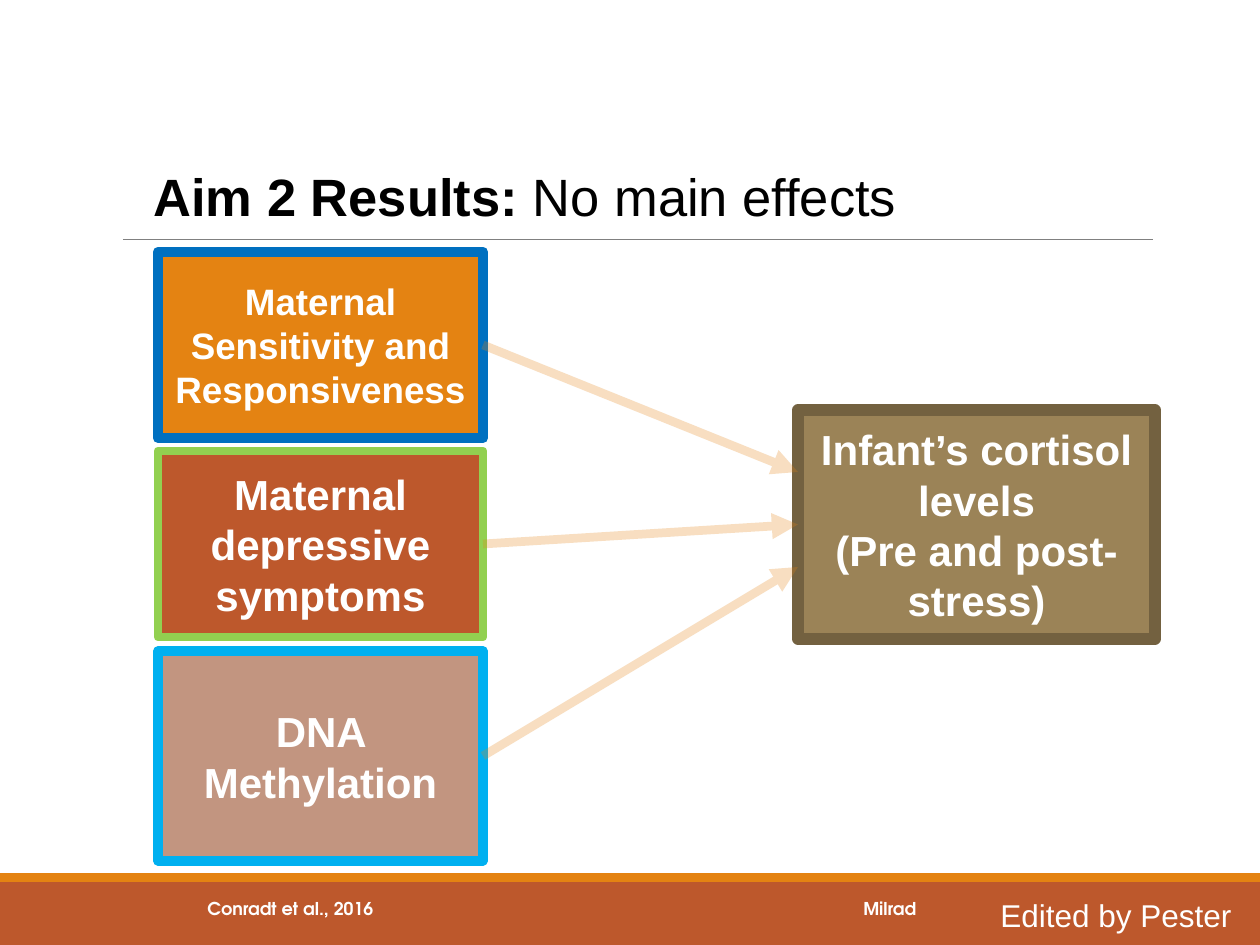
from lxml import etree
from pptx import Presentation, util as u
from pptx.dml.color import RGBColor
from pptx.enum import shapes, text
from pptx.oxml.ns import qn

PX_PER_INCH = 126
WHITE = "FFFFFF"
BLACK = "000000"
ORANGE = "E48312"
RUST = "BD582C"


def px(length):
    return u.Inches(length / PX_PER_INCH)


def color(value):
    return RGBColor.from_string(value)


class SlideBuilder:
    font = "Arial"
    footer_font = "TeX Gyre Adventor"

    def __init__(self, slide):
        self.slide = slide

    def add_span(self, para, words, **style):
        span = para.add_run()
        span.text = words
        hue = style.pop("color", WHITE)
        formats = {"name": self.font, "bold": False, **style}
        for name, value in formats.items():
            setattr(span.font, name, value)
        span.font.color.rgb = color(hue)

    def bar(self, left, top, width, height, fill):
        box = self.slide.shapes.add_shape(
            shapes.MSO_SHAPE.RECTANGLE, *map(px, (left, top, width, height)))
        box.shadow.inherit = False
        box.fill.solid()
        box.fill.fore_color.rgb = color(fill)
        box.line.fill.background()
        return box

    def factor(self, place, fill, border, weight, lines, size=24):
        box = self.bar(*place, fill)
        box.line.color.rgb = color(border)
        box.line.width = u.Pt(weight)
        frame = box.text_frame
        frame.word_wrap = True
        frame.vertical_anchor = text.MSO_ANCHOR.MIDDLE
        for index, words in enumerate(lines):
            para = frame.add_paragraph() if index else frame.paragraphs[0]
            para.alignment = text.PP_ALIGN.CENTER
            self.add_span(para, words, size=u.Pt(size), bold=True)
        return box

    def line(self, start, end, hue, weight):
        connector = self.slide.shapes.add_connector(
            shapes.MSO_CONNECTOR.STRAIGHT, *map(px, start + end))
        etree.SubElement(connector._element.spPr, qn("a:effectLst"))
        connector.line.color.rgb = color(hue)
        connector.line.width = u.Pt(weight)
        return connector

    def arrow(self, source, end, target=None):
        connector = self.line((0, 0), end, ORANGE, 5)
        connector.begin_connect(source, 3)
        if target is not None:
            connector.end_connect(target, 1)
        outline = connector.line._get_or_add_ln()
        hue = outline.find(".//" + qn("a:srgbClr"))
        etree.SubElement(hue, qn("a:alpha"), val="25000")
        etree.SubElement(outline, qn("a:tailEnd"), type="triangle")

    def label(self, place, spans, wrap=True):
        box = self.slide.shapes.add_textbox(*map(px, place))
        frame = box.text_frame
        frame.word_wrap = wrap
        frame.auto_size = text.MSO_AUTO_SIZE.SHAPE_TO_FIT_TEXT
        for words, style in spans:
            self.add_span(frame.paragraphs[0], words, **style)


def main():
    deck = Presentation()
    deck.slide_width, deck.slide_height = px(1260), px(945)
    page = SlideBuilder(deck.slides.add_slide(deck.slide_layouts[6]))

    page.bar(0, 882, 1260, 63, RUST)
    page.bar(0, 873, 1260, 9, ORANGE)
    page.line((123, 239), (1153, 239), "808080", 0.5)

    left, width = 158, 325
    sensitivity = page.factor((left, 252, width, 186), ORANGE, "0070C0", 6,
                              ["Maternal Sensitivity and Responsiveness"], size=21)
    depression = page.factor((left, 451, width, 186), RUST, "92D050", 5,
                             ["Maternal depressive symptoms"])
    cortisol = page.factor((798, 410, 357, 229), "9B8357", "736140", 6.5,
                           ["Infant’s cortisol levels", "(Pre and post-stress)"])
    page.arrow(sensitivity, (798, 472))
    page.arrow(depression, (798, 524), cortisol)

    title = {"size": u.Pt(30), "color": BLACK}
    page.label((141, 158, 775, 77),
               [("Aim 2 Results: ", {**title, "bold": True}),
                ("No main effects", title)], wrap=False)

    methylation = page.factor((left, 651, width, 210), "C29580", "00B0F0", 5.25,
                              ["DNA Methylation"])
    page.arrow(methylation, (798, 567))

    credit = {"size": u.Pt(10.1), "name": page.footer_font, "bold": True}
    page.label((195, 892, 465, 34), [("Conradt et al., 2016", credit)])
    page.label((851, 892, 127, 34), [("Milrad", credit)])
    page.label((988, 890, 272, 50), [("Edited by Pester", {"size": u.Pt(18)})])

    deck.save("out.pptx")


if __name__ == "__main__":
    main()
